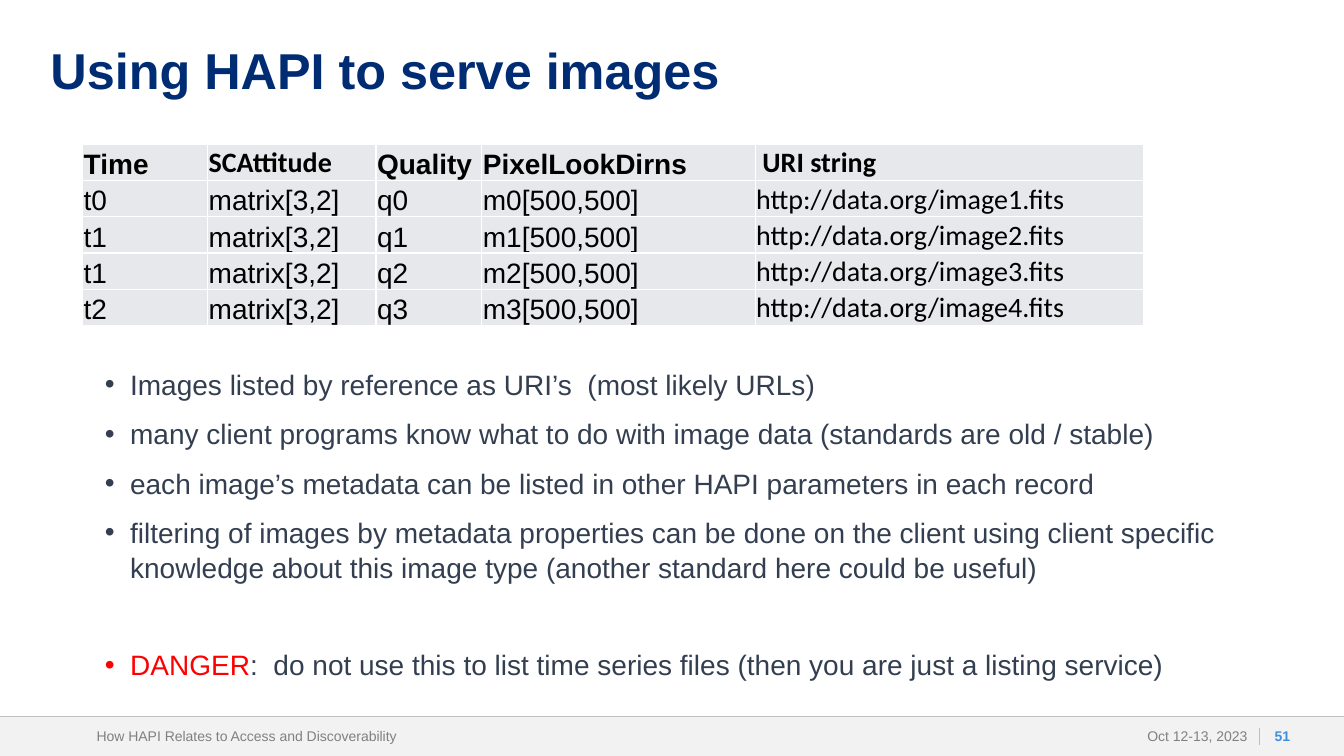
from collections import namedtuple
from dataclasses import dataclass

from lxml.etree import SubElement
from pptx import Presentation
from pptx.dml.color import RGBColor
from pptx.enum.shapes import MSO_CONNECTOR as Connector, MSO_SHAPE as Shape
from pptx.enum.text import MSO_ANCHOR as Anchor, MSO_AUTO_SIZE as AutoSize, PP_ALIGN as Align
from pptx.oxml.ns import qn
from pptx.util import Inches, Pt

Box = namedtuple("Box", "left top width height")


@dataclass(frozen=True)
class Theme:
    navy: str = "002C73"
    slate: str = "333F50"
    danger: str = "FF0000"
    black: str = "000000"
    white: str = "FFFFFF"
    cell: str = "E7E8EB"
    band: str = "F2F2F2"
    rule: str = "BFBFBF"
    muted: str = "808080"
    accent: str = "3E8EDE"
    sans: str = "Arial"
    humanist: str = "Calibri"
    title_size: int = 36
    body_size: int = 20
    footer_size: int = 10


THEME = Theme()
TABLE_ROWS = [("Time", "SCAttitude", "Quality", "PixelLookDirns", " URI string")] + [
    (time, "matrix[3,2]", f"q{index}", f"m{index}[500,500]", f"http://data.org/image{index + 1}.fits")
    for index, time in enumerate(("t0", "t1", "t1", "t2"))
]
COLUMN_WIDTHS = (1.24, 1.67, 1.05, 2.71, 3.85)
BULLETS = [
    "Images listed by reference as URI’s  (most likely URLs)",
    "many client programs know what to do with image data (standards are old / stable)",
    "each image’s metadata can be listed in other HAPI parameters in each record",
    "filtering of images by metadata properties can be done on the client using client specific "
    "knowledge about this image type (another standard here could be useful)",
]
WARNING = ("DANGER", ":  do not use this to list time series files (then you are just a listing service)")


def write(para, text, size=THEME.body_size, color=THEME.slate, font=THEME.sans, bold=False):
    span = para.add_run()
    span.text = text
    span.font.size = Pt(size)
    span.font.name = font
    span.font.bold = bold
    span.font.color.rgb = RGBColor.from_string(color)


def place(shape, box):
    shape.left, shape.top, shape.width, shape.height = map(Inches, box)


def set_frame(frame, anchor, side=0):
    frame.word_wrap = True
    frame.auto_size = AutoSize.NONE
    frame.vertical_anchor = anchor
    frame.margin_left = frame.margin_right = Inches(side)
    frame.margin_top = frame.margin_bottom = 0


def add_title(page, box):
    title = page.shapes.title
    place(title, box)
    set_frame(title.text_frame, Anchor.TOP)
    para = title.text_frame.paragraphs[0]
    para.alignment = Align.LEFT
    para.line_spacing = 0.9
    write(para, "Using HAPI to serve images", size=THEME.title_size, color=THEME.navy, bold=True)


def style_cell(cell):
    cell.vertical_anchor = Anchor.BOTTOM
    cell.margin_left = cell.margin_right = cell.margin_top = Inches(0.01)
    cell.margin_bottom = 0
    properties = cell._tc.get_or_add_tcPr()
    for edge in ("a:lnL", "a:lnR", "a:lnT", "a:lnB"):
        line = SubElement(properties, qn(edge), w=str(Pt(1)))
        SubElement(SubElement(line, qn("a:solidFill")), qn("a:srgbClr"), val=THEME.white)
    cell.fill.solid()
    cell.fill.fore_color.rgb = RGBColor.from_string(THEME.cell)


def add_image_table(page, box):
    frame = page.shapes.add_table(len(TABLE_ROWS), len(COLUMN_WIDTHS), *map(Inches, box))
    table = frame.table
    table.first_row = table.horz_banding = False
    for column, width in zip(table.columns, COLUMN_WIDTHS):
        column.width = Inches(width)
    for row_index, texts in enumerate(TABLE_ROWS):
        table.rows[row_index].height = Inches(box.height / len(TABLE_ROWS))
        header = row_index == 0
        for column_index, text in enumerate(texts):
            cell = table.cell(row_index, column_index)
            style_cell(cell)
            humanist = column_index == 4 or (header and column_index == 1)
            write(cell.text_frame.paragraphs[0], text, color=THEME.black, bold=header,
                  font=THEME.humanist if humanist else THEME.sans)


def add_bullet(frame, first=False, gap=10):
    para = frame.paragraphs[0] if first else frame.add_paragraph()
    properties = para._p.get_or_add_pPr()
    properties.set("marL", str(Inches(0.25)))
    properties.set("indent", str(-Inches(0.25)))
    SubElement(properties, qn("a:buFont"), typeface=THEME.sans)
    SubElement(properties, qn("a:buChar"), char="•")
    para.line_spacing = 1.05
    para.space_before = Pt(0 if first else gap)
    return para


def add_body(page, box):
    body = page.placeholders[1]
    place(body, box)
    frame = body.text_frame
    set_frame(frame, Anchor.TOP)
    for index, text in enumerate(BULLETS):
        write(add_bullet(frame, first=index == 0), text)
    warning = add_bullet(frame, gap=44)
    for text, color in zip(WARNING, (THEME.danger, THEME.slate)):
        write(warning, text, color=color)


def add_rule(page, start, end):
    rule = page.shapes.add_connector(Connector.STRAIGHT, *map(Inches, start + end))
    rule.line.color.rgb = RGBColor.from_string(THEME.rule)
    rule.line.width = Pt(0.5)
    SubElement(rule._element.spPr, qn("a:effectLst"))


def add_footer_text(page, box, text, align, side=0.1, color=THEME.muted, bold=False):
    label = page.shapes.add_textbox(*map(Inches, box))
    set_frame(label.text_frame, Anchor.MIDDLE, side)
    para = label.text_frame.paragraphs[0]
    para.alignment = align
    write(para, text, size=THEME.footer_size, color=color, bold=bold)


def add_footer(page, box):
    band = page.shapes.add_shape(Shape.RECTANGLE, *map(Inches, box))
    band.shadow.inherit = False
    band.fill.solid()
    band.fill.fore_color.rgb = RGBColor.from_string(THEME.band)
    band.line.fill.background()
    right = box.left + box.width
    add_rule(page, (box.left, box.top), (right, box.top))
    add_rule(page, (right - 0.84, box.top + 0.11), (right - 0.84, box.top + 0.28))
    add_footer_text(page, box._replace(left=box.left + 0.86, width=3.5),
                    "How HAPI Relates to Access and Discoverability", Align.LEFT)
    add_footer_text(page, box._replace(left=right - 4.06, width=3.2), "Oct 12-13, 2023", Align.RIGHT)
    add_footer_text(page, box._replace(left=right - 0.82, width=0.42), "51", Align.CENTER,
                    side=0, color=THEME.accent, bold=True)


def main():
    deck = Presentation()
    deck.slide_width, deck.slide_height = Inches(13.33), Inches(7.5)
    page = deck.slides.add_slide(deck.slide_layouts[1])
    add_footer(page, Box(0, 7.11, 13.33, 0.39))
    add_title(page, Box(0.5, 0.46, 12.33, 0.83))
    add_image_table(page, Box(0.82, 1.43, sum(COLUMN_WIDTHS), 1.8))
    add_body(page, Box(1.04, 3.63, 11.25, 3.16))
    deck.save("out.pptx")


if __name__ == "__main__":
    main()
